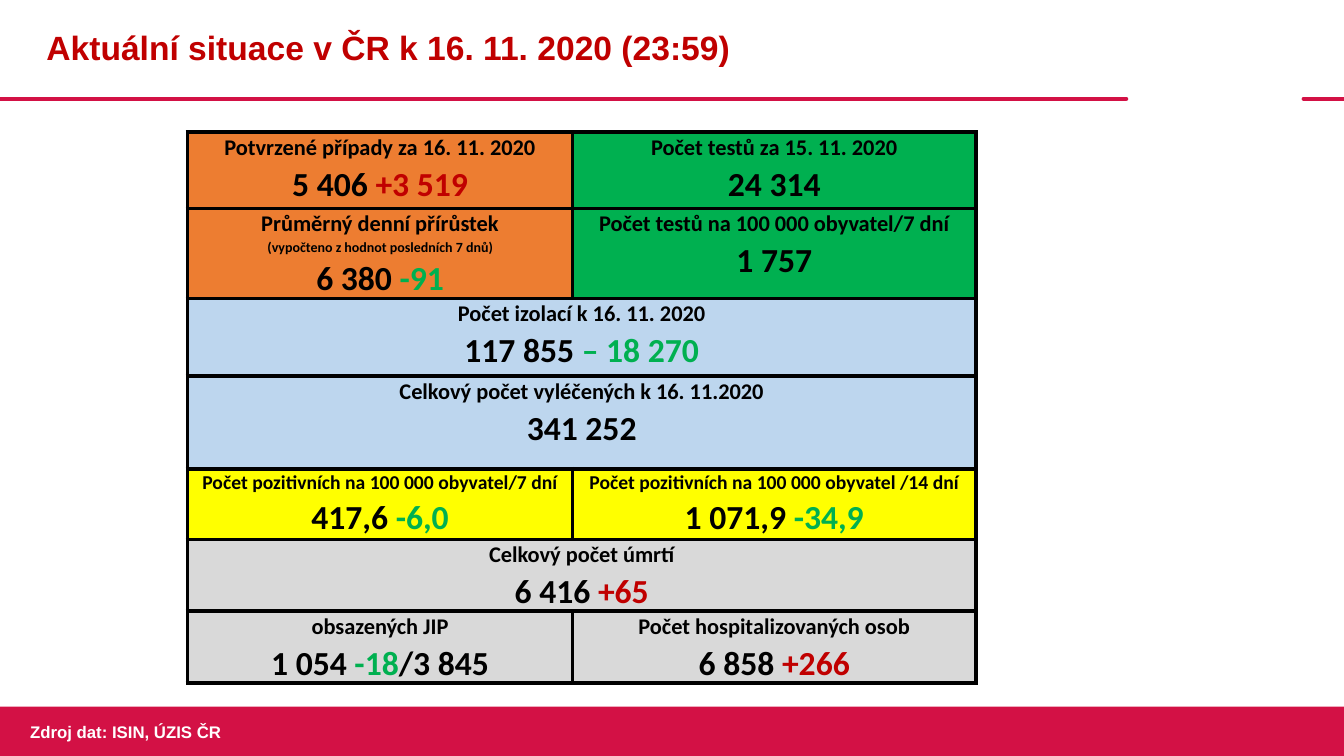
from pptx import Presentation
from pptx.dml.color import RGBColor
from pptx.enum.shapes import MSO_CONNECTOR, MSO_SHAPE
from pptx.enum.text import MSO_ANCHOR, PP_ALIGN
from pptx.oxml.ns import qn
from pptx.util import Inches, Pt
from lxml import etree

STRAIGHT, RECT = MSO_CONNECTOR.STRAIGHT, MSO_SHAPE.RECTANGLE
MIDDLE, LEFT, CENTER = MSO_ANCHOR.MIDDLE, PP_ALIGN.LEFT, PP_ALIGN.CENTER

# Content
COLORS = {
    "brand": "D31145", "red": "C00000", "green": "00B050", "black": "000000",
    "white": "FFFFFF", "orange": "ED7D31", "blue": "BDD6EE",
    "yellow": "FFFF00", "gray": "D9D9D9",
}
TITLE = "Aktuální situace v ČR k 16. 11. 2020 (23:59)"
SOURCE = "Zdroj dat: ISIN, ÚZIS ČR"
RULES = [(0, 11.17), (12.93, 13.33)]
COLS = [3.82, 4]

# Each row: height, cells; each cell: fill, heading size, headings, number parts
ROWS = [
    (0.76, [
        ("orange", 16, ["Potvrzené případy za 16. 11. 2020"],
         [("5 406 ", "black"), ("+3 519", "red")]),
        ("green", 16, ["Počet testů za 15. 11. 2020"], [("24 314", "black")]),
    ]),
    (0.84, [
        ("orange", 16,
         ["Průměrný denní přírůstek", "(vypočteno z hodnot posledních 7 dnů)"],
         [("6 380 ", "black"), ("-91", "green")]),
        ("green", 16, ["Počet testů na 100 000 obyvatel/7 dní"],
         [("1 757", "black")]),
    ]),
    (0.77, [
        ("blue", 16, ["Počet izolací k 16. 11. 2020"],
         [("117 855 ", "black"), ("– 18 270", "green")]),
    ]),
    (0.92, [
        ("blue", 16, ["Celkový počet vyléčených k 16. 11.2020"],
         [("341 252", "black")]),
    ]),
    (0.7, [
        ("yellow", 14, ["Počet pozitivních na 100 000 obyvatel/7 dní"],
         [("417,6 ", "black"), ("-6,0", "green")]),
        ("yellow", 14, ["Počet pozitivních na 100 000 obyvatel /14 dní"],
         [("1 071,9 ", "black"), ("-34,9", "green")]),
    ]),
    (0.68, [
        ("gray", 16, ["Celkový počet úmrtí"],
         [("6 416 ", "black"), ("+65", "red")]),
    ]),
    (0.59, [
        ("gray", 16, ["obsazených JIP"],
         [("1 054 ", "black"), ("-18", "green"), ("/3 845", "black")]),
        ("gray", 16, ["Počet hospitalizovaných osob"],
         [("6 858 ", "black"), ("+266", "red")]),
    ]),
]


def color(name):
    return RGBColor.from_string(COLORS[name])


def style(run, size, tint, face):
    run.font.size = Pt(size)
    run.font.bold = True
    run.font.name = face
    run.font.color.rgb = color(tint)


def border(cell):
    props = cell._tc.get_or_add_tcPr()
    for side in ("a:lnL", "a:lnR", "a:lnT", "a:lnB"):
        line = etree.SubElement(props, qn(side), w=str(Pt(3)))
        fill = etree.SubElement(line, qn("a:solidFill"))
        etree.SubElement(fill, qn("a:srgbClr"), val=COLORS["black"])


def write(cell, size, heads, parts):
    cell.margin_left = cell.margin_right = Inches(0.04)
    cell.margin_top = cell.margin_bottom = 0
    frame = cell.text_frame
    frame.text = "\n".join(heads + [""])
    for para in frame.paragraphs:
        para.alignment = CENTER
        para.line_spacing = 1.07
    for para, points in zip(frame.paragraphs, [size, 10][:len(heads)]):
        style(para.runs[0], points, "black", "Calibri")
    for text, tint in parts:
        run = frame.paragraphs[-1].add_run()
        run.text = text
        style(run, 24, tint, "Calibri")


deck = Presentation()
deck.slide_width, deck.slide_height = Inches(13.33), Inches(7.5)
slide = deck.slides.add_slide(deck.slide_layouts[5])
shapes = slide.shapes

# Header rules
for start, end in RULES:
    rule = shapes.add_connector(STRAIGHT, Inches(start), Inches(0.98),
                                Inches(end), Inches(0.98))
    rule.line.color.rgb = color("brand")
    rule.line.width = Pt(3)
    props = rule._element.spPr
    props.find(qn("a:ln")).set("cap", "rnd")
    etree.SubElement(props, qn("a:effectLst"))

# Title
title = shapes.title
title.left, title.top = Inches(0.36), 0
title.width, title.height = Inches(10.81), Inches(0.98)
title.text_frame.text = TITLE
title.text_frame.vertical_anchor = MIDDLE
para = title.text_frame.paragraphs[0]
para.alignment = LEFT
para.line_spacing = 0.9
style(para.runs[0], 24, "red", "Arial")

# Footer band with source
band = shapes.add_shape(RECT, 0, Inches(7.01), Inches(13.33), Inches(0.49))
band.shadow.inherit = False
band.fill.solid()
band.fill.fore_color.rgb = color("brand")
band.line.fill.background()
note = shapes.add_textbox(Inches(0.2), Inches(7.11), Inches(2.24), Inches(0.3))
note.text_frame.word_wrap = True
note.text_frame.text = SOURCE
style(note.text_frame.paragraphs[0].runs[0], 12, "white", "Arial")

# Table
height = sum(row[0] for row in ROWS)
table = shapes.add_table(len(ROWS), len(COLS), Inches(1.86), Inches(1.31),
                         Inches(sum(COLS)), Inches(height)).table
for col, width in zip(table.columns, COLS):
    col.width = Inches(width)
for r, (tall, cells) in enumerate(ROWS):
    table.rows[r].height = Inches(tall)
    if len(cells) == 1:
        table.cell(r, 0).merge(table.cell(r, 1))
    for c in range(len(COLS)):
        cell = table.cell(r, c)
        fill, size, heads, parts = cells[min(c, len(cells) - 1)]
        border(cell)
        cell.fill.solid()
        cell.fill.fore_color.rgb = color(fill)
        if not cell.is_spanned:
            write(cell, size, heads, parts)
        if r == 0:
            cell.text_frame.paragraphs[-1].space_after = Pt(12)

deck.save("out.pptx")
